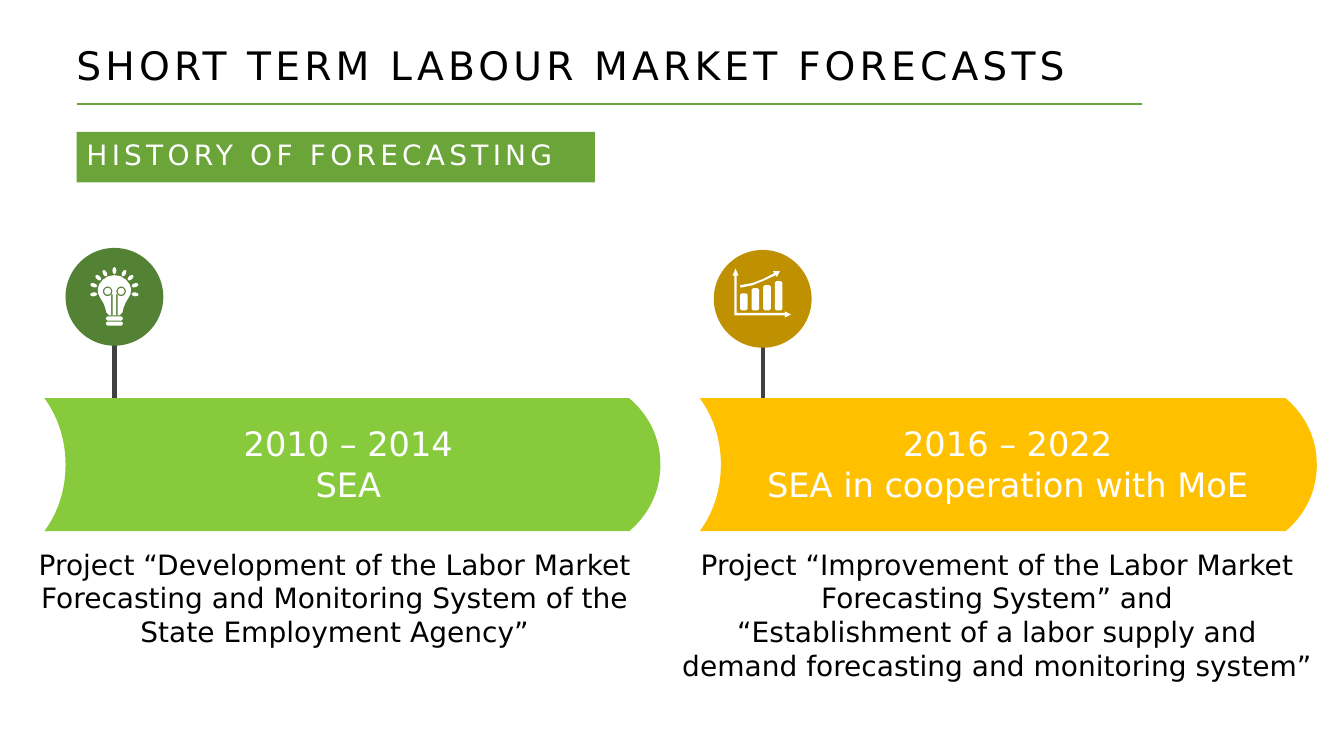
import math

from lxml import etree
from pptx import Presentation
from pptx.dml.color import RGBColor
from pptx.enum.shapes import MSO_CONNECTOR, MSO_SHAPE
from pptx.enum.text import MSO_ANCHOR, PP_ALIGN
from pptx.oxml.ns import qn
from pptx.util import Inches, Pt

STRAIGHT = MSO_CONNECTOR.STRAIGHT
RECTANGLE = MSO_SHAPE.RECTANGLE
OVAL = MSO_SHAPE.OVAL
TOP, MIDDLE = MSO_ANCHOR.TOP, MSO_ANCHOR.MIDDLE
LEFT, CENTER = PP_ALIGN.LEFT, PP_ALIGN.CENTER

FONT = "DejaVu Sans"
GREEN, WHITE, BLACK, STEM_GRAY = "6BA439", "FFFFFF", "000000", "414042"
PIN_SIZE = 0.97
BANNER_TOP = 3.95

# Icon geometry in inches, measured from the centre of the pin
BULB_HALF = [(0, -0.215), (0.06, -0.205), (0.115, -0.17), (0.15, -0.125),
             (0.165, -0.08), (0.16, -0.03), (0.14, 0.01), (0.11, 0.06),
             (0.09, 0.11), (0.08, 0.155), (0.05, 0.185)]
RAYS = [(0, -0.26), (0.095, -0.235), (0.16, -0.19), (0.205, -0.115), (0.205, -0.025)]
AXES = [(0.28, 0.155), (0.22, 0.125), (0.22, 0.14), (-0.26, 0.14), (-0.26, -0.23),
        (-0.24, -0.23), (-0.27, -0.3), (-0.3, -0.23), (-0.28, -0.23),
        (-0.28, 0.165), (0.22, 0.165), (0.22, 0.185)]
TREND = [(-0.22, -0.11), (-0.1, -0.135), (0.01, -0.18), (0.13, -0.235), (0.14, -0.215),
         (0.17, -0.275), (0.1, -0.275), (0.115, -0.255), (0, -0.195),
         (-0.11, -0.155), (-0.225, -0.135)]


def color(value):
    return RGBColor.from_string(value)


def paint(shape, fill):
    shape.shadow.inherit = False
    shape.fill.solid()
    shape.fill.fore_color.rgb = color(fill)
    shape.line.fill.background()
    return shape


def add_block(slide, kind, left, top, width, height, fill):
    return paint(slide.shapes.add_shape(
        kind, Inches(left), Inches(top), Inches(width), Inches(height)), fill)


def add_outline(slide, contours, left, top, fill):
    """One freeform of closed contours; a contour inside another cuts a hole."""
    builder = None
    for contour in contours:
        start, *others = [(Inches(left + x), Inches(top + y)) for x, y in contour]
        if builder is None:
            builder = slide.shapes.build_freeform(*start)
        else:
            builder.move_to(*start)
        builder.add_line_segments(others, close=True)
    return paint(builder.convert_to_shape(), fill)


def bend(shape):
    """Turn each three line segments of a freeform into one Bezier curve."""
    segments = list(shape._element.iter(qn("a:lnTo")))
    for first in range(0, len(segments), 3):
        curve = etree.Element(qn("a:cubicBezTo"))
        segments[first].addprevious(curve)
        for segment in segments[first:first + 3]:
            curve.append(segment[0])
            segment.getparent().remove(segment)


def add_line(slide, start, end, line_color, width):
    line = slide.shapes.add_connector(STRAIGHT, *(Inches(n) for n in (*start, *end)))
    line.line.color.rgb = color(line_color)
    line.line.width = Pt(width)
    etree.SubElement(line._element.spPr, qn("a:effectLst"))


def write(shape, lines, size, text_color, align=CENTER, anchor=TOP, spacing=0):
    """Fill a shape with one paragraph per line; spacing is between letters, in points."""
    frame = shape.text_frame
    frame.word_wrap = True
    frame.vertical_anchor = anchor
    for index, line in enumerate(lines):
        paragraph = frame.add_paragraph() if index else frame.paragraphs[0]
        paragraph.alignment = align
        paragraph.font.name = FONT
        paragraph.font.size = Pt(size)
        paragraph.font.color.rgb = color(text_color)
        run = paragraph.add_run()
        run.text = line
        if spacing:
            run._r.get_or_add_rPr().set("spc", str(spacing * 100))
    return frame


def add_text(slide, left, top, width, height, lines, size, text_color, **options):
    box = slide.shapes.add_textbox(Inches(left), Inches(top), Inches(width), Inches(height))
    return write(box, lines, size, text_color, **options)


def mirrored(points):
    return [(-dx, dy) for dx, dy in points]


def oval(x, y, radius_x, radius_y, turn=0, count=8):
    points = []
    for step in range(count):
        angle = 2 * math.pi * step / count
        dx, dy = radius_x * math.cos(angle), radius_y * math.sin(angle)
        points.append((x + dx * math.cos(turn) - dy * math.sin(turn),
                       y + dx * math.sin(turn) + dy * math.cos(turn)))
    return points


def bar(left, top, width, height, cut=0.0):
    """Rectangle whose corners are cut off."""
    right, bottom = left + width, top + height
    return [(left + cut, top), (right - cut, top), (right, top + cut), (right, bottom - cut),
            (right - cut, bottom), (left + cut, bottom), (left, bottom - cut),
            (left, top + cut)]


def bulb_contours():
    contours = [BULB_HALF + mirrored(BULB_HALF[:0:-1])]
    for side in (-1, 1):
        contours += [oval(side * 0.067, -0.055, radius, radius, count=12)
                     for radius in (0.048, 0.034)]
        contours.append(bar(side * 0.025 - 0.008, -0.025, 0.016, 0.21))
    contours += [bar(-0.085, top, 0.17, 0.04, 0.015) for top in (0.195, 0.245)]
    contours += [oval(dx, dy, 0.035, 0.02, math.atan2(dy + 0.05, dx))
                 for dx, dy in RAYS + mirrored(RAYS[1:])]
    return contours


def growth_chart_contours():
    bars = [bar(-0.225 + 0.115 * index, 0.115 - height, 0.075, height, 0.015)
            for index, height in enumerate((0.17, 0.22, 0.25, 0.29))]
    return bars + [AXES, TREND]


def add_heading(slide, left, top, width):
    add_text(slide, left - 0.1, top, width + 0.4, 0.78, ["SHORT TERM LABOUR MARKET FORECASTS"],
             28, BLACK, align=LEFT, anchor=MIDDLE, spacing=3)
    add_line(slide, (left + width, top + 0.78), (left, top + 0.78), GREEN, 1.5)
    tag = add_block(slide, RECTANGLE, left, top + 1.06, 5.14, 0.5, GREEN)
    frame = write(tag, ["HISTORY OF FORECASTING"], 20, WHITE,
                  align=LEFT, anchor=MIDDLE, spacing=3)
    frame.paragraphs[0].line_spacing = 0.8


def add_banner(slide, left, top, width, fill):
    """Ribbon with a hollow left end and a rounded right end."""
    shoulder, height = width - 0.31, 1.32
    middle = height / 2
    outline = [(width, middle), (width, 0.39), (width - 0.12, 0.16), (shoulder, 0),
               (shoulder, 0), (0, 0), (0, 0),
               (0.14, 0.19), (0.21, 0.42), (0.21, middle),
               (0.21, 0.9), (0.14, 1.13), (0, height),
               (0, height), (shoulder, height), (shoulder, height),
               (width - 0.12, 1.16), (width, 0.93), (width, middle)]
    bend(add_outline(slide, [outline], left, top, fill))


def add_period(slide, left, width, fill, pin, label, project):
    """One stage: pin with icon, banner with label, project text below."""
    pin_left, pin_top, pin_color, icon = pin
    pin_x, pin_y = pin_left + PIN_SIZE / 2, pin_top + PIN_SIZE / 2
    add_line(slide, (pin_x, BANNER_TOP), (pin_x, pin_top + 0.19), STEM_GRAY, 3.12)
    add_banner(slide, left, BANNER_TOP, width, fill)
    label_left, label_width, label_lines = label
    frame = add_text(slide, label_left, 4.2, label_width, 0.71, label_lines, 24, WHITE)
    frame.margin_left = frame.margin_right = frame.margin_top = frame.margin_bottom = 0
    add_block(slide, OVAL, pin_left, pin_top, PIN_SIZE, PIN_SIZE, pin_color)
    add_outline(slide, icon, pin_x, pin_y, WHITE)
    text_left, text_width, text_height, project_lines = project
    add_text(slide, text_left, 5.38, text_width, text_height, project_lines, 20, BLACK)


def main():
    presentation = Presentation()
    presentation.slide_width, presentation.slide_height = Inches(13.33), Inches(7.5)
    slide = presentation.slides.add_slide(presentation.slide_layouts[6])
    add_heading(slide, 0.76, 0.25, 10.57)
    add_period(slide, 0.44, 6.11, "87CB3D",
               pin=(0.65, 2.46, "548235", bulb_contours()),
               label=(2.19, 2.53, ["2010 – 2014", "SEA"]),
               project=(0.27, 6.1, 1.04, [
                   "Project “Development of the Labor Market Forecasting and "
                   "Monitoring System of the State Employment Agency”"]))
    add_period(slide, 6.94, 6.12, "FFC000",
               pin=(7.08, 2.48, "BF9000", growth_chart_contours()),
               label=(7.17, 5.65, ["2016 – 2022", "SEA in cooperation with MoE"]),
               project=(6.61, 6.56, 1.78, [
                   "Project “Improvement of the Labor Market Forecasting System” and",
                   "“Establishment of a labor supply and demand forecasting "
                   "and monitoring system”"]))
    presentation.save("out.pptx")


if __name__ == "__main__":
    main()
